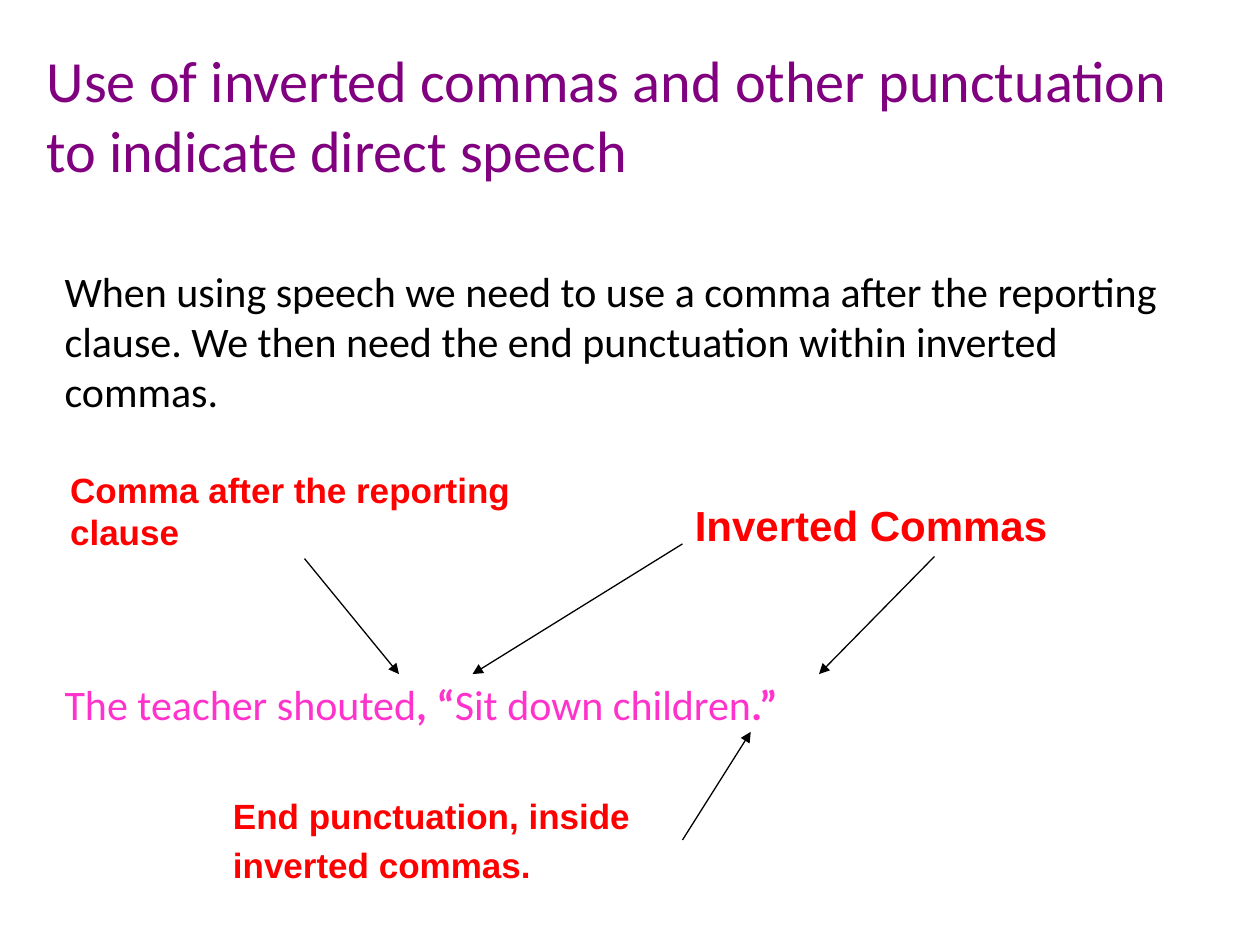
from lxml.etree import SubElement as Sub
from pptx import Presentation
from pptx.dml.color import RGBColor as RGB
from pptx.enum.shapes import MSO_CONNECTOR as Conn
from pptx.enum.text import MSO_ANCHOR as Anchor, PP_ALIGN as Align
from pptx.oxml.ns import qn
from pptx.util import Inches, Pt

INK = {"title": "800080", "body": "000000", "speech": "FF33CC",
       "label": "FF0000", "arrow": "000000"}

deck = Presentation()
deck.slide_width, deck.slide_height = Inches(10), Inches(7.5)
UNIT = deck.slide_width / 120  # grid of 120 columns by 90 rows


def grid(*cells):
    return [round(cell * UNIT) for cell in cells]


def write(para, text, ink, **look):
    """Add a run to a paragraph and format its font."""
    run = para.add_run()
    run.text = text
    run.font.color.rgb = RGB.from_string(INK[ink])
    for key, value in look.items():
        setattr(run.font, key, value)


slide = deck.slides.add_slide(deck.slide_layouts[5])

# Title
title = slide.shapes.title
title.left, title.top, title.width, title.height = grid(3.25, 3.4, 113, 15)
frame = title.text_frame
frame.word_wrap = True
frame.vertical_anchor = Anchor.MIDDLE
para = frame.paragraphs[0]
para.alignment = Align.LEFT
write(para, "Use of inverted commas and other punctuation to indicate direct speech",
      "title", name="Calibri", size=Pt(33.3), bold=False)

# Rule and example sentence
frame = slide.shapes.add_textbox(*grid(6.15, 21.4, 108, 48.5)).text_frame
frame.word_wrap = True
for side in ("left", "right", "bottom"):
    setattr(frame, f"margin_{side}", 0)
frame.margin_top = Inches(0.32)
body = {"name": "Calibri", "size": Pt(24)}
write(frame.paragraphs[0],
      "When using speech we need to use a comma after the reporting clause. "
      "We then need the end punctuation within inverted commas.", "body", **body)
para = frame.add_paragraph()
para.space_before = Pt(150)
for text, bold in (("The teacher shouted", False), (", “", True),
                   ("Sit down children", False), (".”", True)):
    write(para, text, "speech", bold=bold, **body)

# Labels: text, size, line spacing, top margin, box
labels = [
    ("Comma after the reporting clause", 20, 1, 0.05, (5.5, 44, 44.4, 9.2)),
    ("Inverted Commas", 24, 1, 0.05, (65, 47, 42.5, 6)),
    ("End punctuation, inside inverted commas.", 20, 1.15, 0, (21, 75.1, 41.6, 10)),
]
for text, size, pitch, inset, box in labels:
    frame = slide.shapes.add_textbox(*grid(*box)).text_frame
    frame.word_wrap = True
    frame.margin_top = Inches(inset)
    para = frame.paragraphs[0]
    para.line_spacing = pitch
    write(para, text, "label", name="Arial", size=Pt(size), bold=True)

# Arrows from each label to its mark
arrows = [(29, 53.2, 38, 64.2), (65, 51.8, 45, 64.2),
          (89, 53, 78, 64.2), (65, 80, 71.5, 69.7)]
for ends in arrows:
    arrow = slide.shapes.add_connector(Conn.STRAIGHT, *grid(*ends))
    arrow.line.color.rgb = RGB.from_string(INK["arrow"])
    arrow.line.width = Pt(0.75)
    Sub(arrow.line._get_or_add_ln(), qn("a:tailEnd"), type="triangle")
    Sub(arrow._element.spPr, qn("a:effectLst"))

deck.save("out.pptx")
